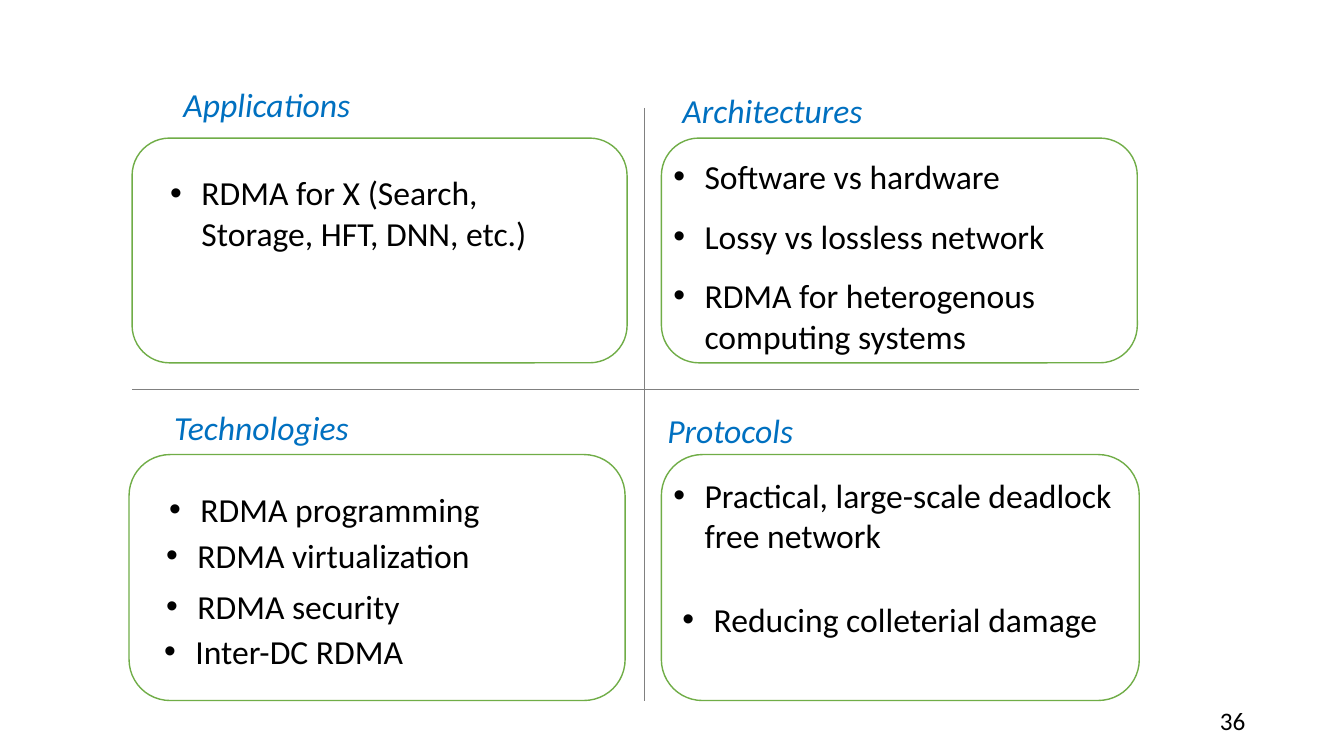
from lxml.etree import SubElement
from pptx import Presentation
from pptx.dml.color import RGBColor
from pptx.enum.shapes import MSO_CONNECTOR, MSO_SHAPE
from pptx.enum.text import MSO_AUTO_SIZE
from pptx.oxml.ns import qn
from pptx.util import Inches, Pt

COLORS = {
    "background": "FFFFFF",
    "divider": "808080",
    "panel": "70AD47",
    "heading": "0070C0",
    "text": "000000",
}
HEADING = {"size": Pt(24), "name": "Calibri", "italic": True}
BODY = {"size": Pt(24), "name": "Calibri"}
NUMBER = {"size": Pt(18), "name": "Calibri"}

DIVIDERS = [(1.31, 3.86, 11.3, 3.86), (6.39, 1.07, 6.39, 6.95)]

QUADRANTS = [
    {
        "panel": (1.31, 1.37, 4.91, 2.23),
        "heading": ("Applications", 1.72, 0.78, 1.88, 0.5),
        "bullets": [
            ("RDMA for X (Search, Storage, HFT, DNN, etc.)", 1.59, 1.66, 4.36, 0.91),
        ],
    },
    {
        "panel": (1.28, 4.51, 4.92, 2.44),
        "heading": ("Technologies", 1.63, 3.99, 1.97, 0.5),
        "bullets": [
            ("RDMA programming", 1.58, 4.8, 3.61, 0.5),
            ("RDMA virtualization", 1.55, 5.26, 4.14, 0.5),
            ("RDMA security", 1.55, 5.76, 4.14, 0.5),
            ("Inter-DC RDMA", 1.53, 6.21, 4.14, 0.5),
        ],
    },
    {
        "panel": (6.56, 1.37, 4.72, 2.23),
        "heading": ("Architectures", 6.67, 0.84, 2.03, 0.5),
        "bullets": [
            ("Software vs hardware", 6.58, 1.5, 3.97, 0.5),
            ("Lossy vs lossless network", 6.58, 2.09, 3.97, 0.5),
            ("RDMA for heterogenous computing systems", 6.58, 2.68, 4.48, 0.91),
        ],
    },
    {
        "panel": (6.56, 4.51, 4.74, 2.44),
        "heading": ("Protocols", 6.52, 4.02, 1.48, 0.5),
        "bullets": [
            ("Practical, large-scale deadlock free network", 6.58, 4.66, 4.72, 0.91),
            ("Reducing colleterial damage", 6.67, 5.89, 4.49, 0.5),
        ],
    },
]


def rgb(name):
    return RGBColor.from_string(COLORS[name])


def add_divider(s, ends):
    line = s.shapes.add_connector(MSO_CONNECTOR.STRAIGHT, *map(Inches, ends))
    line.line.color.rgb = rgb("divider")
    line.line.width = Pt(0.5)
    SubElement(line._element.spPr, qn("a:effectLst"))


def add_panel(s, box):
    sp = s.shapes.add_shape(MSO_SHAPE.ROUNDED_RECTANGLE, *map(Inches, box))
    sp.shadow.inherit = False
    sp.fill.solid()
    sp.fill.fore_color.rgb = rgb("background")
    sp.line.color.rgb = rgb("panel")
    sp.line.width = Pt(1)


def add_text(s, text, box, style, color, wrap=False):
    tf = s.shapes.add_textbox(*map(Inches, box)).text_frame
    tf.word_wrap = wrap
    tf.auto_size = MSO_AUTO_SIZE.SHAPE_TO_FIT_TEXT
    p = tf.paragraphs[0]
    r = p.add_run()
    r.text = text
    for key, value in style.items():
        setattr(r.font, key, value)
    r.font.color.rgb = rgb(color)
    return p


def add_bullet(s, text, box):
    p = add_text(s, text, box, BODY, "text", wrap=True)
    pPr = p._p.get_or_add_pPr()
    pPr.set("marL", str(Inches(0.31)))
    pPr.set("indent", str(Inches(-0.31)))
    SubElement(pPr, qn("a:buFont")).set("typeface", "Arial")
    SubElement(pPr, qn("a:buChar")).set("char", "•")


def main():
    prs = Presentation()
    prs.slide_width = Inches(13.33)
    prs.slide_height = Inches(7.5)
    s = prs.slides.add_slide(prs.slide_layouts[6])

    add_text(s, "36", (12, 6.95, 0.5, 0.4), NUMBER, "text")
    for ends in DIVIDERS:
        add_divider(s, ends)
    for quadrant in QUADRANTS:
        add_panel(s, quadrant["panel"])
        title, *box = quadrant["heading"]
        add_text(s, title, box, HEADING, "heading")
        for text, *box in quadrant["bullets"]:
            add_bullet(s, text, box)

    prs.save("out.pptx")


if __name__ == "__main__":
    main()
